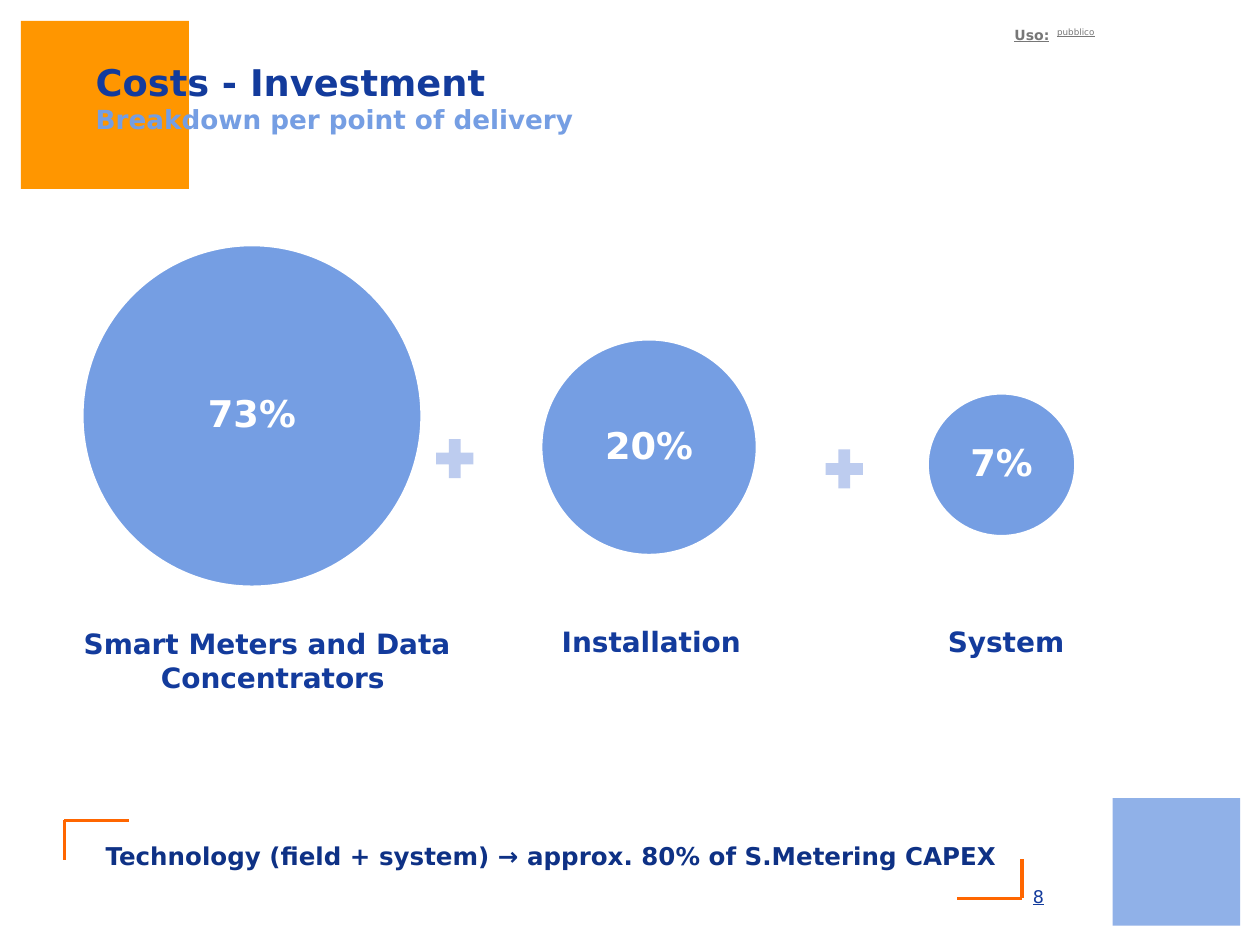
from dataclasses import dataclass

from lxml.etree import SubElement
from pptx import Presentation
from pptx.dml.color import RGBColor
from pptx.enum.shapes import MSO_CONNECTOR, MSO_SHAPE
from pptx.enum.text import MSO_ANCHOR, PP_ALIGN
from pptx.oxml.ns import qn
from pptx.slide import Slide
from pptx.util import Cm, Pt

NAVY = RGBColor(0x13, 0x3B, 0x9C)
DEEP_NAVY = RGBColor(0x0E, 0x31, 0x85)
SKY = RGBColor(0x75, 0x9E, 0xE3)
PALE = RGBColor(0xBD, 0xCC, 0xEF)
AMBER = RGBColor(0xFF, 0x96, 0x00)
ORANGE = RGBColor(0xFF, 0x66, 0x00)
GREY = RGBColor(0x77, 0x77, 0x77)
WHITE = RGBColor(0xFF, 0xFF, 0xFF)


@dataclass
class SlideBuilder:
    slide: Slide
    font: str = "DejaVu Sans"

    def style(self, run, size, color, bold=True, underline=False):
        run.font.name = self.font
        run.font.size = Pt(size)
        run.font.color.rgb = color
        run.font.bold = bold
        run.font.underline = underline

    def shape(self, kind, box, fill, opacity=None):
        shape = self.slide.shapes.add_shape(kind, *map(Cm, box))
        shape.shadow.inherit = False
        shape.fill.solid()
        shape.fill.fore_color.rgb = fill
        shape.line.fill.background()
        if opacity is not None:
            color = shape._element.spPr.find(qn("a:solidFill"))[0]
            SubElement(color, qn("a:alpha")).set("val", str(opacity * 1000))
        return shape

    def text(self, box, wording, size, color, bold=True, underline=False,
             align=PP_ALIGN.LEFT, anchor=MSO_ANCHOR.TOP, margins=(0.25, 0.13)):
        """Add a one-paragraph text box; margins are (sides, top and bottom)."""
        frame = self.slide.shapes.add_textbox(*map(Cm, box)).text_frame
        frame.word_wrap = True
        frame.vertical_anchor = anchor
        frame.margin_left = frame.margin_right = Cm(margins[0])
        frame.margin_top = frame.margin_bottom = Cm(margins[1])
        frame.text = wording
        paragraph = frame.paragraphs[0]
        paragraph.alignment = align
        for run in paragraph.runs:
            self.style(run, size, color, bold, underline)
        return paragraph

    def circle(self, box, share):
        circle = self.shape(MSO_SHAPE.OVAL, box, SKY)
        circle.line.color.rgb = WHITE
        circle.line.width = Pt(2)
        frame = circle.text_frame
        frame.margin_left = frame.margin_right = 0
        frame.margin_top = frame.margin_bottom = 0
        frame.vertical_anchor = MSO_ANCHOR.MIDDLE
        frame.text = share
        paragraph = frame.paragraphs[0]
        paragraph.alignment = PP_ALIGN.CENTER
        paragraph.line_spacing = 0.9
        self.style(paragraph.runs[0], 21, WHITE)

    def caption(self, box, wording):
        paragraph = self.text(box, wording, 16, NAVY, align=PP_ALIGN.CENTER,
                              margins=(0.08, 0.08))
        properties = paragraph._p.get_or_add_pPr()
        properties.set("marL", str(Cm(0.23)))
        properties.set("indent", str(-Cm(0.23)))

    def line(self, x1, y1, x2, y2):
        line = self.slide.shapes.add_connector(
            MSO_CONNECTOR.STRAIGHT, Cm(x1), Cm(y1), Cm(x2), Cm(y2))
        line.line.color.rgb = ORANGE
        line.line.width = Pt(2)
        SubElement(line._element.spPr, qn("a:effectLst"))

    def corner(self, x, y, direction):
        """Draw two lines from a corner; direction 1 is right and down, -1 left and up."""
        self.line(x, y, x + direction * 1.3, y)
        self.line(x, y, x, y + direction * 0.79)


def main():
    presentation = Presentation()
    presentation.slide_width = Cm(25.4)
    presentation.slide_height = Cm(19.05)
    builder = SlideBuilder(presentation.slides.add_slide(presentation.slide_layouts[6]))

    builder.shape(MSO_SHAPE.RECTANGLE, (0.42, 0.42, 3.39, 3.39), AMBER)
    builder.shape(MSO_SHAPE.RECTANGLE, (22.43, 16.09, 2.57, 2.57), SKY, opacity=80)

    builder.text((20.17, 0.41, 3.89, 0.41), "Uso:", 8, GREY, underline=True,
                 margins=(0.28, 0.13))
    usage = builder.text((21.03, 0.53, 4.01, 0.36), "pubblico", 5, GREY, bold=False,
                         underline=True, margins=(0.28, 0.13))
    usage.line_spacing = 0.7
    builder.text((20.57, 17.78, 3, 0.64), "8", 10, NAVY, bold=False, underline=True,
                 anchor=MSO_ANCHOR.BOTTOM)

    title = builder.text((1.7, 0.13, 21.59, 2.72),
                         "Costs - Investment\vBreakdown per point of delivery",
                         21, NAVY, anchor=MSO_ANCHOR.BOTTOM, margins=(0.23, 0.13))
    builder.style(title.runs[1], 15, SKY)

    cost_parts = [
        ("73%", (1.65, 4.93, 6.86, 6.91),
         "Smart Meters and Data Concentrators", (1.09, 12.55, 8.59, 2.77)),
        ("20%", (10.9, 6.83, 4.37, 4.37), "Installation", (9.5, 12.52, 7.26, 3.02)),
        ("7%", (18.69, 7.92, 3, 2.9), "System", (17.04, 12.52, 6.48, 2.77)),
    ]
    for share, circle_box, wording, caption_box in cost_parts:
        builder.circle(circle_box, share)
        builder.caption(caption_box, wording)
    for left, top in ((8.66, 8.71), (16.51, 8.92)):
        builder.shape(MSO_SHAPE.MATH_PLUS, (left, top, 1.02, 1.07), PALE)

    builder.text((1.5, 16.13, 19.23, 2.26),
                 "Technology (field + system) → approx. 80% of S.Metering CAPEX",
                 14, DEEP_NAVY, align=PP_ALIGN.CENTER, anchor=MSO_ANCHOR.MIDDLE,
                 margins=(0, 0))
    builder.corner(1.3, 16.54, 1)
    builder.corner(20.6, 18.11, -1)

    presentation.save("out.pptx")


if __name__ == "__main__":
    main()
